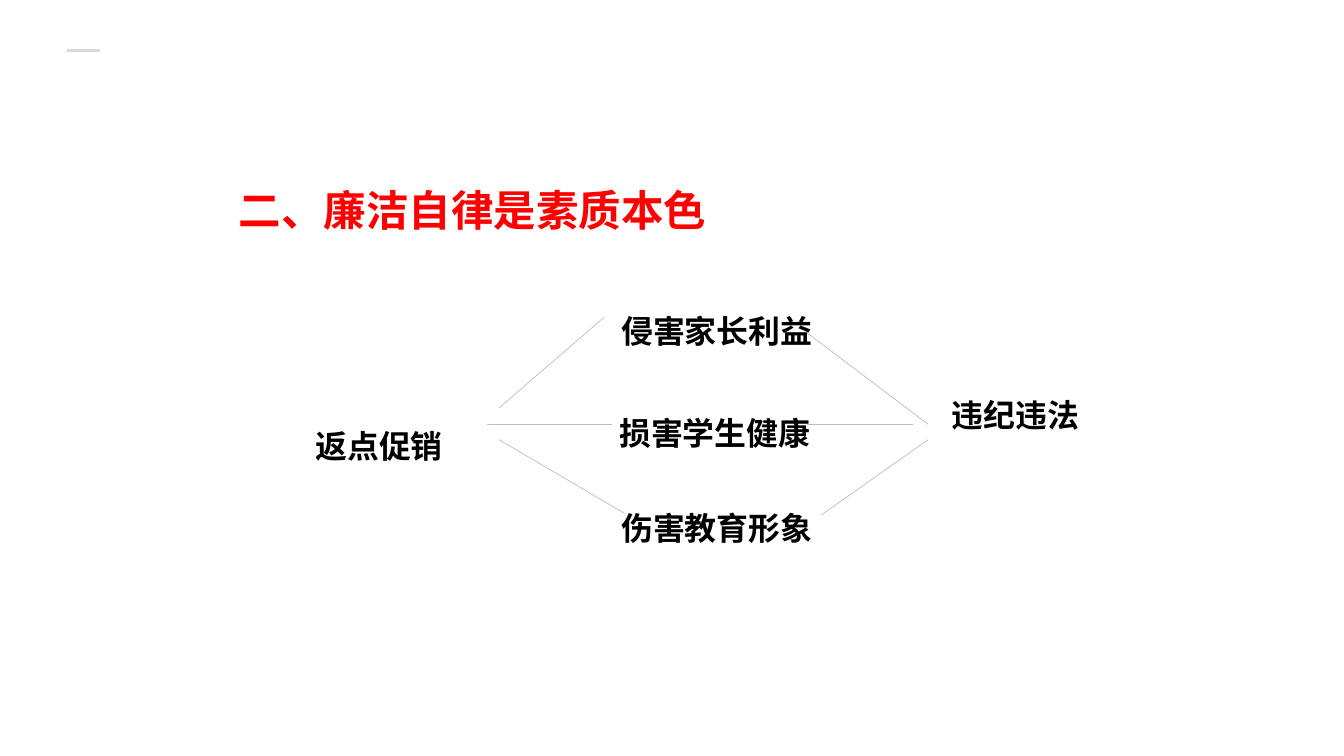
from lxml import etree
from pptx import Presentation
from pptx.dml.color import RGBColor
from pptx.enum import shapes, text
from pptx.oxml import ns
from pptx.util import Inches, Pt

BLACK = RGBColor(0x00, 0x00, 0x00)
RED = RGBColor(0xFF, 0x00, 0x00)
GREY = RGBColor(0xD9, 0xD9, 0xD9)
SAGE = RGBColor(0xB1, 0xC2, 0xB4)

CAUSE = ("返点促销", 3.2, 4.21)
HARMS = [
    ("侵害家长利益", 6.4, 3.01),
    ("损害学生健康", 6.38, 4.08),
    ("伤害教育形象", 6.4, 5.07),
]
RESULT = ("违纪违法", 9.86, 3.89)

LINKS = [
    (5.22, 4.27, 6.32, 3.32),
    (5.09, 4.44, 6.4, 4.44),
    (5.22, 4.6, 6.53, 5.37),
    (8.44, 3.48, 9.71, 4.44),
    (8.44, 4.44, 9.55, 4.44),
    (8.59, 5.39, 9.71, 4.6),
]


def add_label(slide, words, left, top, width=2.52, height=0.71,
              size=24, color=BLACK):
    box = slide.shapes.add_textbox(*map(Inches, (left, top, width, height)))
    frame = box.text_frame
    frame.word_wrap = True
    frame.auto_size = text.MSO_AUTO_SIZE.SHAPE_TO_FIT_TEXT
    para = frame.paragraphs[0]
    para.line_spacing = 1.5
    run = para.add_run()
    run.text = words
    style = {"name": "Calibri", "size": Pt(size), "bold": True}
    for key, value in style.items():
        setattr(run.font, key, value)
    run.font.color.rgb = color


def add_line(slide, ends, color=SAGE, width=0.5):
    line = slide.shapes.add_connector(
        shapes.MSO_CONNECTOR.STRAIGHT, *map(Inches, ends))
    line.line.color.rgb = color
    line.line.width = Pt(width)
    etree.SubElement(line._element.spPr, ns.qn("a:effectLst"))


def main():
    deck = Presentation()
    deck.slide_width = Inches(14.06)
    deck.slide_height = Inches(7.91)
    slide = deck.slides.add_slide(deck.slide_layouts[6])

    add_line(slide, (1.05, 0.53, 0.7, 0.53), GREY, 2)
    add_label(slide, "二、廉洁自律是素质本色", 2.4, 1.61, 5.4, 0.91, 32, RED)
    for ends in LINKS:
        add_line(slide, ends)
    for label in [CAUSE, *HARMS, RESULT]:
        add_label(slide, *label)

    deck.save("out.pptx")


if __name__ == "__main__":
    main()
